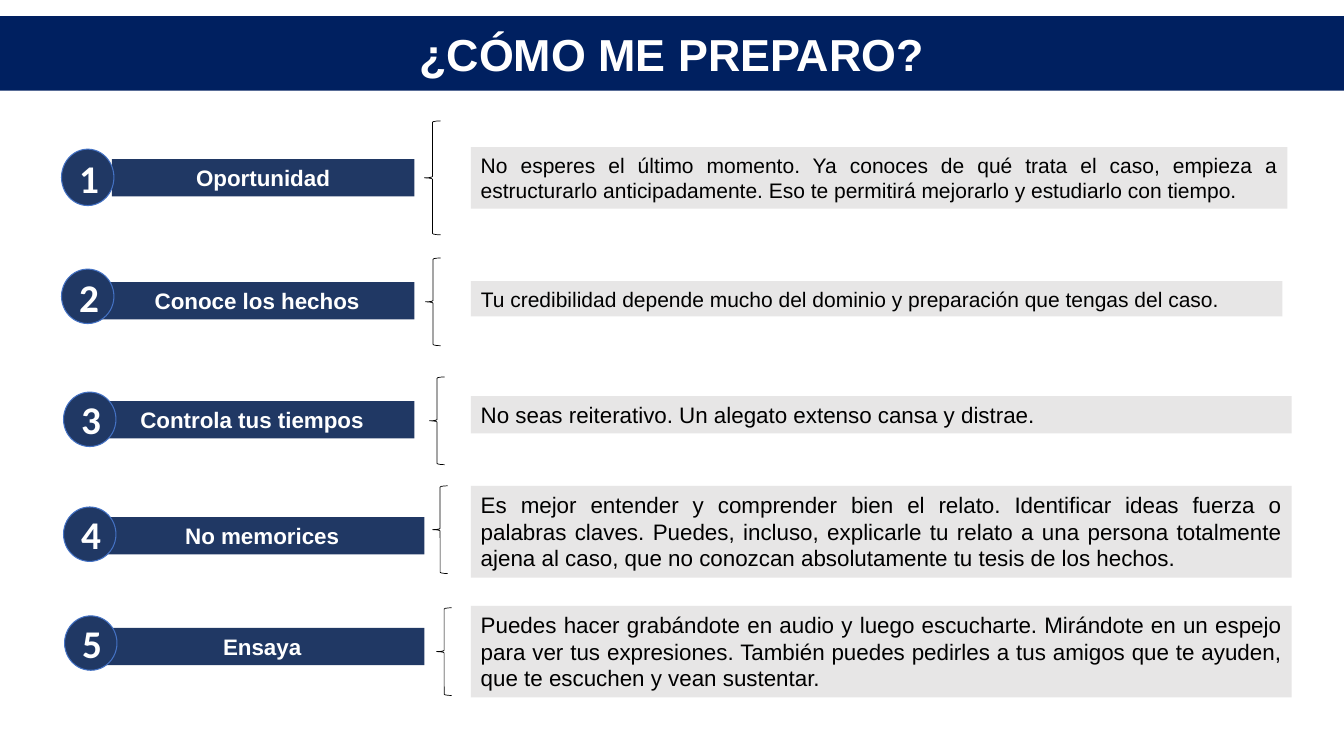
from dataclasses import dataclass

from pptx import Presentation
from pptx.dml.color import RGBColor
from pptx.enum.shapes import MSO_SHAPE
from pptx.enum.text import MSO_ANCHOR, MSO_AUTO_SIZE, PP_ALIGN
from pptx.util import Inches, Pt

RECTANGLE, OVAL, BRACE = MSO_SHAPE.RECTANGLE, MSO_SHAPE.OVAL, MSO_SHAPE.LEFT_BRACE
TOP, MIDDLE = MSO_ANCHOR.TOP, MSO_ANCHOR.MIDDLE
CENTER, JUSTIFY = PP_ALIGN.CENTER, PP_ALIGN.JUSTIFY
NO_AUTOFIT = MSO_AUTO_SIZE.NONE

TITLE_BLUE, NAVY, OUTLINE_BLUE = "002060", "203864", "4472C4"
GREY, WHITE, BLACK = "E7E6E6", "FFFFFF", "000000"
LABEL_HEIGHT = 0.37
ADVICE_LEFT = 4.67


@dataclass
class Step:
    """One row; each area is left, top, width, height, or the part of it that varies."""
    label: str
    advice: str
    label_area: tuple
    circle_area: tuple
    brace_area: tuple
    advice_area: tuple
    advice_size: int = 16


STEPS = [
    Step("Oportunidad",
         "No esperes el último momento. Ya conoces de qué trata el caso, empieza a "
         "estructurarlo anticipadamente. Eso te permitirá mejorarlo y estudiarlo con tiempo.",
         (1.11, 1.58, 3), (0.61, 1.48, 0.52, 0.56), (4.21, 1.2, 0.16, 1.13),
         (1.46, 8.1, 0.61), 15),
    Step("Conoce los hechos",
         "Tu credibilidad depende mucho del dominio y preparación que tengas del caso.",
         (0.99, 2.8, 3.12), (0.61, 2.67, 0.52, 0.54), (4.22, 2.56, 0.15, 0.87),
         (2.79, 8.05, 0.35), 15),
    Step("Controla tus tiempos",
         "No seas reiterativo. Un alegato extenso cansa y distrae.",
         (0.89, 3.98, 3.22), (0.63, 3.89, 0.52, 0.54), (4.26, 3.74, 0.15, 0.87),
         (3.93, 8.14, 0.37)),
    Step("No memorices",
         "Es mejor entender y comprender bien el relato. Identificar ideas fuerza o "
         "palabras claves. Puedes, incluso, explicarle tu relato a una persona totalmente "
         "ajena al caso, que no conozcan absolutamente tu tesis de los hechos.",
         (0.99, 5.13, 3.22), (0.63, 5.03, 0.52, 0.54), (4.29, 4.82, 0.15, 0.87),
         (4.82, 8.14, 0.91)),
    Step("Ensaya",
         "Puedes hacer grabándote en audio y luego escucharte. Mirándote en un espejo "
         "para ver tus expresiones. También puedes pedirles a tus amigos que te ayuden, "
         "que te escuchen y vean sustentar.",
         (0.99, 6.23, 3.22), (0.64, 6.11, 0.52, 0.54), (4.33, 6.03, 0.15, 0.87),
         (6.01, 8.14, 0.91)),
]


def paint(color_format, color):
    """Set a fill or line from a hex string."""
    color_format.solid()
    color_format.fore_color.rgb = RGBColor.from_string(color)


def add_shape(page, kind, area, fill=None, line=None, line_width=0.75):
    """Add a flat preset shape with an optional fill and outline."""
    shape = page.shapes.add_shape(kind, *map(Inches, area))
    shape.shadow.inherit = False
    if fill:
        paint(shape.fill, fill)
    else:
        shape.fill.background()
    if line:
        paint(shape.line.fill, line)
        shape.line.width = Pt(line_width)
    else:
        shape.line.fill.background()
    return shape


def write(shape, text, size, color=WHITE, font="Arial", bold=True,
          align=CENTER, anchor=TOP):
    """Fill a shape with one formatted paragraph."""
    frame = shape.text_frame
    frame.word_wrap = True
    frame.auto_size = NO_AUTOFIT
    frame.vertical_anchor = anchor
    frame.text = text
    para = frame.paragraphs[0]
    para.alignment = align
    para.line_spacing = 1.0
    para.space_before = Pt(0)
    para.font.name = font
    para.font.size = Pt(size)
    para.font.bold = bold
    para.font.color.rgb = RGBColor.from_string(color)


def add_title(page, text):
    """Turn the title placeholder into a full-width band."""
    title = page.shapes.title
    title.left, title.top, title.width, title.height = map(Inches, (0, 0.16, 13.33, 0.74))
    paint(title.fill, TITLE_BLUE)
    write(title, text, 32, anchor=MIDDLE)


def add_step(page, number, step):
    """Add a numbered label, its brace and its advice."""
    label = add_shape(page, RECTANGLE, (*step.label_area, LABEL_HEIGHT), NAVY)
    write(label, step.label, 16)
    circle = add_shape(page, OVAL, step.circle_area, NAVY, OUTLINE_BLUE)
    write(circle, str(number), 28, font="Calibri", anchor=MIDDLE)
    add_shape(page, BRACE, step.brace_area, line=BLACK, line_width=0.5)
    advice = add_shape(page, RECTANGLE, (ADVICE_LEFT, *step.advice_area), GREY)
    write(advice, step.advice, step.advice_size, BLACK, bold=False, align=JUSTIFY)


def main():
    """Build the slide and save it."""
    deck = Presentation()
    deck.slide_width, deck.slide_height = Inches(13.33), Inches(7.5)
    page = deck.slides.add_slide(deck.slide_layouts.get_by_name("Title Only"))
    add_title(page, "¿CÓMO ME PREPARO?")
    for number, step in enumerate(STEPS, start=1):
        add_step(page, number, step)
    deck.save("out.pptx")


if __name__ == "__main__":
    main()
